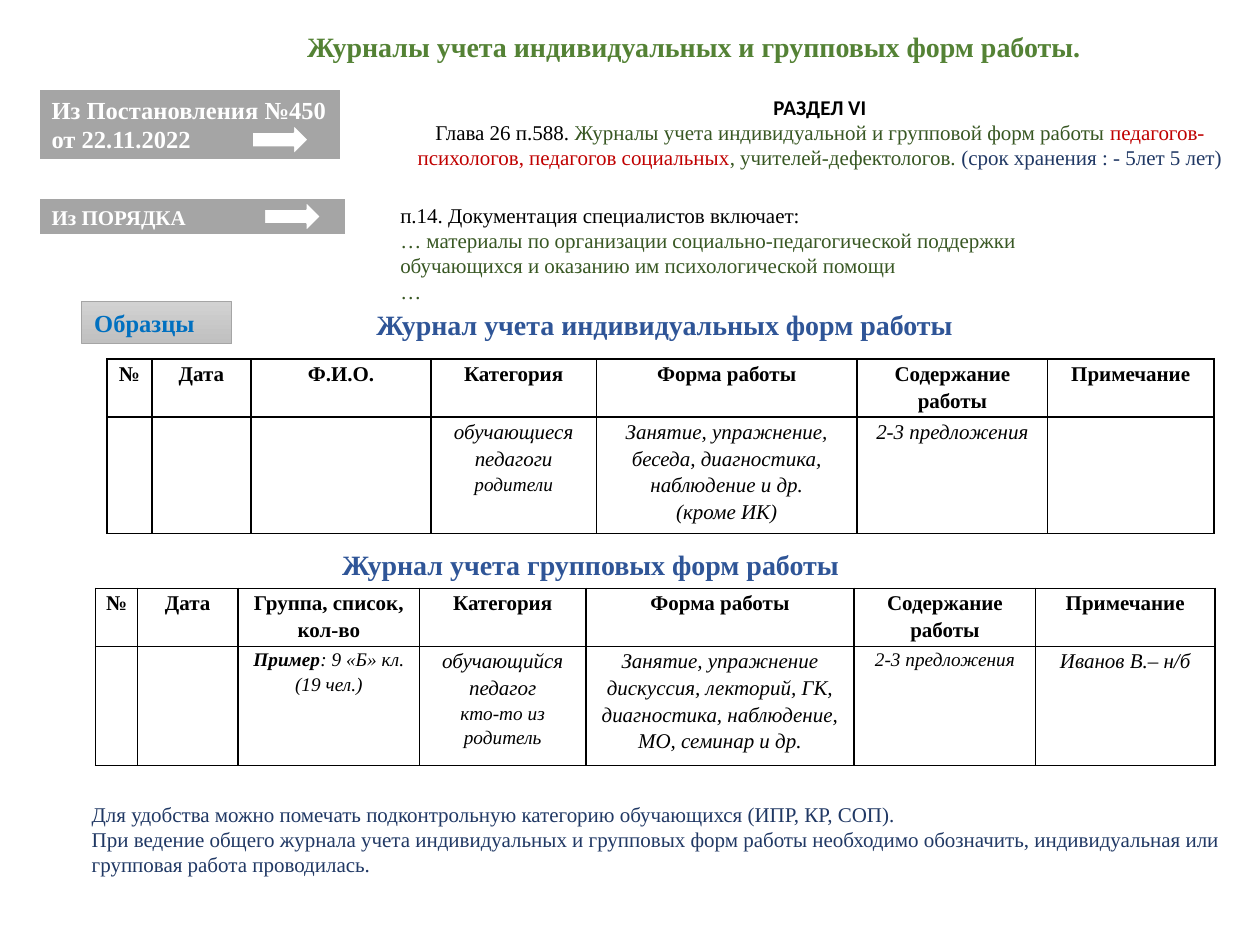
from lxml import etree
from pptx import Presentation
from pptx.dml.color import RGBColor
from pptx.enum.shapes import MSO_SHAPE
from pptx.enum.text import MSO_ANCHOR, PP_ALIGN
from pptx.oxml.ns import qn
from pptx.util import Cm, Pt

RECT, ARROW = MSO_SHAPE.RECTANGLE, MSO_SHAPE.RIGHT_ARROW
LEFT, CENTER = PP_ALIGN.LEFT, PP_ALIGN.CENTER
MIDDLE = MSO_ANCHOR.MIDDLE

SERIF = "Times New Roman"
BLACK, WHITE, GRAY = "000000", "FFFFFF", "A5A5A5"
GREEN, MOSS, RED = "548235", "385723", "C00000"
BLUE, NAVY, AZURE = "2F5597", "203864", "0070C0"

SMALL = {"size": 11}
HEADS = ["№", "Дата", "Ф.И.О.", "Категория", "Форма работы",
         "Содержание работы", "Примечание"]
GROUP_HEADS = HEADS[:2] + ["Группа, список, кол-во"] + HEADS[3:]
SOLO_ROW = [
    [], [], [],
    ["обучающиеся", "педагоги", [("родители", SMALL)]],
    ["Занятие, упражнение,", "беседа, диагностика, наблюдение и др.", "(кроме ИК)"],
    ["2-3 предложения"],
    [],
]
GROUP_ROW = [
    [], [],
    [[("Пример", {"size": 11, "bold": True}), (": 9 «Б» кл.", SMALL)],
     [("(19 чел.)", SMALL)]],
    ["обучающийся", "педагог", [("кто-то из родитель", SMALL)]],
    ["Занятие, упражнение",
     "дискуссия, лекторий, ГК, диагностика, наблюдение, МО, семинар и др."],
    [[("2-3 предложения", SMALL)]],
    ["Иванов В.– н/б"],
]


def rgb(code):
    return RGBColor.from_string(code)


def style(font, values):
    for key, value in values.items():
        if key == "color":
            font.color.rgb = rgb(value)
        else:
            setattr(font, key, Pt(value) if key == "size" else value)


def write(frame, paras, align=LEFT, space=None, **look):
    """Fill a frame; a paragraph is a string or a list of (text, format) runs."""
    base = {"name": SERIF, "size": 12, "color": BLACK, **look}
    frame.word_wrap = True
    for i, para in enumerate(paras):
        line = frame.paragraphs[0] if i == 0 else frame.add_paragraph()
        line.alignment = align
        line.line_spacing = space
        for text, extra in [(para, {})] if isinstance(para, str) else para:
            run = line.add_run()
            run.text = text
            style(run.font, {**base, **extra})


def add_text(slide, place, paras, **look):
    box = slide.shapes.add_textbox(*map(Cm, place))
    write(box.text_frame, paras, **look)


def add_block(slide, kind, place, fill, line, width):
    block = slide.shapes.add_shape(kind, *map(Cm, place))
    block.shadow.inherit = False
    if isinstance(fill, str):
        block.fill.solid()
        block.fill.fore_color.rgb = rgb(fill)
    else:
        block.fill.gradient()
        block.fill.gradient_angle = 270
        for stop, code in zip(block.fill.gradient_stops, fill):
            stop.color.rgb = rgb(code)
    block.line.color.rgb = rgb(line)
    block.line.width = Pt(width)
    return block


def add_label(slide, place, paras, size, fill=GRAY, line=WHITE, width=1.5, color=WHITE):
    frame = add_block(slide, RECT, place, fill, line, width).text_frame
    frame.vertical_anchor = MIDDLE
    write(frame, paras, size=size, bold=True, color=color)


def add_edges(cell):
    props = cell._tc.get_or_add_tcPr()
    for i, side in enumerate("LRTB"):
        edge = etree.Element(qn(f"a:ln{side}"), w=str(Pt(1)))
        fill = etree.SubElement(edge, qn("a:solidFill"))
        etree.SubElement(fill, qn("a:srgbClr"), val=BLACK)
        props.insert(i, edge)


def add_grid(slide, left, top, widths, heights, heads, body):
    rows = [[[head] for head in heads], body]
    size = (left, top, sum(widths), sum(heights))
    table = slide.shapes.add_table(len(rows), len(widths), *map(Cm, size)).table
    table.horz_banding = False
    for col, width in zip(table.columns, widths):
        col.width = Cm(width)
    for r, (row, height) in enumerate(zip(rows, heights)):
        table.rows[r].height = Cm(height)
        for c, paras in enumerate(row):
            cell = table.cell(r, c)
            cell.margin_left = cell.margin_right = Cm(0.18)
            cell.margin_top = cell.margin_bottom = 0
            cell.fill.background()
            add_edges(cell)
            write(cell.text_frame, paras, align=CENTER, space=1.15,
                  bold=r == 0, italic=r > 0)


def main():
    deck = Presentation()
    deck.slide_width, deck.slide_height = Cm(25.4), Cm(19.05)
    slide = deck.slides.add_slide(deck.slide_layouts[6])

    add_text(slide, (5.66, 0.48, 16.66, 0.94),
             ["Журналы учета индивидуальных и групповых форм работы."],
             align=CENTER, size=16, bold=True, color=GREEN)

    add_label(slide, (0.79, 1.78, 6.1, 1.45),
              ["Из Постановления №450", "от 22.11.2022"], 14)
    add_label(slide, (0.79, 3.99, 6.2, 0.76), ["Из ПОРЯДКА"], 12)
    for left, top in [(5.08, 2.51), (5.33, 4.06)]:
        add_block(slide, ARROW, (left, top, 1.14, 0.61), WHITE, GRAY, 1)

    add_text(slide, (7.82, 1.78, 17.42, 1.8), [
        [("РАЗДЕЛ VI", {"name": "Calibri", "bold": True})],
        [("Глава 26 п.588. ", {}),
         ("Журналы учета индивидуальной и групповой форм работы ", {"color": MOSS}),
         ("педагогов-психологов, педагогов социальных", {"color": RED}),
         (", учителей-дефектологов. ", {"color": MOSS}),
         ("(срок хранения : - 5лет 5 лет)", {"color": NAVY})],
    ], align=CENTER)
    add_text(slide, (7.82, 3.96, 14.55, 2.31), [
        [("п.14. Документация специалистов включает:", {"color": BLACK})],
        "… материалы по организации социально-педагогической поддержки "
        "обучающихся и оказанию им психологической помощи",
        "…",
    ], color=MOSS)

    add_label(slide, (1.65, 6.07, 3.02, 0.86), ["Образцы"], 14,
              fill=("D2D2D2", "C0C0C0"), line=GRAY, width=0.5, color=AZURE)
    for place, title in [
        ((7.34, 6.07, 12.88, 0.94), "Журнал учета индивидуальных форм работы"),
        ((6.65, 10.92, 13.56, 0.94), "Журнал учета групповых форм работы"),
    ]:
        add_text(slide, place, [title], size=16, bold=True, color=BLUE)

    add_grid(slide, 2.16, 7.24, (0.9, 2, 3.63, 3.33, 5.26, 3.84, 3.35),
             (1.17, 2.34), HEADS, SOLO_ROW)
    add_grid(slide, 1.93, 11.86, (0.84, 2.03, 3.66, 3.35, 5.41, 3.66, 3.61),
             (1.17, 2.4), GROUP_HEADS, GROUP_ROW)

    add_text(slide, (1.6, 16.03, 23.52, 1.8), [
        "Для удобства можно помечать подконтрольную категорию обучающихся (ИПР, КР, СОП).",
        "При ведение общего журнала учета индивидуальных и групповых форм работы "
        "необходимо обозначить, индивидуальная или групповая работа проводилась.",
    ], color=NAVY)

    deck.save("out.pptx")


if __name__ == "__main__":
    main()
